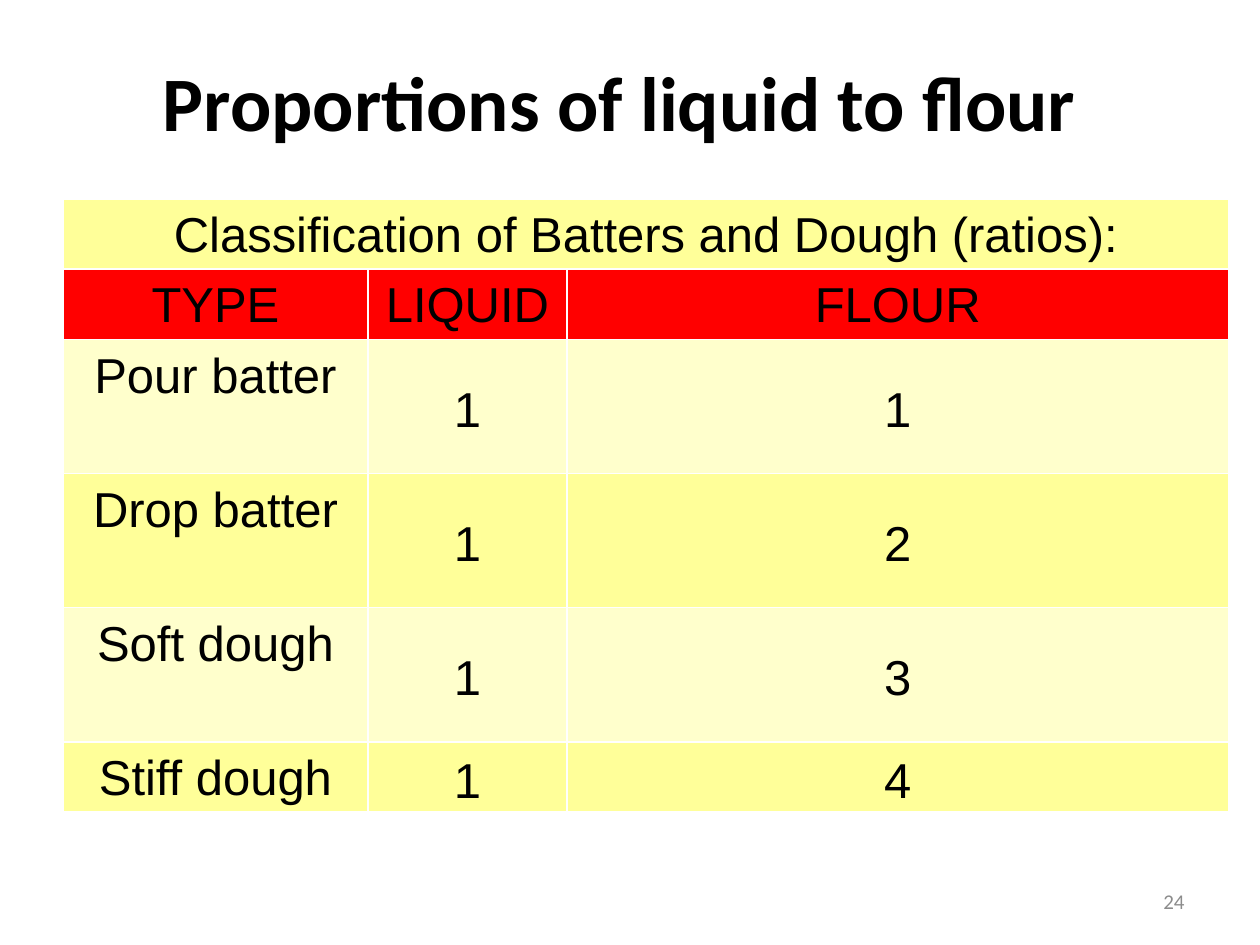
from pptx import Presentation
from pptx.dml.color import RGBColor
from pptx.enum.text import MSO_ANCHOR, PP_ALIGN
from pptx.util import Inches, Pt

COLORS = {
    "text": "000000",
    "number": "8C8C8C",
    "header": "FF0000",
    "dark_band": "FFFF99",
    "light_band": "FFFFCC",
}
TITLE = "Classification of Batters and Dough (ratios):"
HEADINGS = ("TYPE", "LIQUID", "FLOUR")
RATIOS = [
    ("Pour batter", "1", "1"),
    ("Drop batter", "1", "2"),
    ("Soft dough", "1", "3"),
    ("Stiff dough", "1", "4"),
]
COLUMN_WIDTHS = (2.42, 1.58, 5.25)
SHORT_ROW = 0.52
TALL_ROW = 1.065


def style_paragraph(paragraph, font_name, size, color, alignment, bold=False):
    paragraph.alignment = alignment
    paragraph.font.name = font_name
    paragraph.font.size = Pt(size)
    paragraph.font.bold = bold
    paragraph.font.color.rgb = RGBColor.from_string(COLORS[color])


def add_text(slide, box, text, size, color, alignment, anchor, bold=False):
    shape = slide.shapes.add_textbox(*map(Inches, box))
    frame = shape.text_frame
    frame.word_wrap = True
    frame.vertical_anchor = anchor
    frame.text = text
    style_paragraph(frame.paragraphs[0], "Calibri", size, color, alignment, bold)
    return shape


def add_title(slide, box):
    shape = add_text(slide, box, "Proportions of liquid to flour", 44, "text",
                     PP_ALIGN.CENTER, MSO_ANCHOR.TOP, bold=True)
    shape.text_frame.margin_top = Inches(0.1)


def add_slide_number(slide, box):
    add_text(slide, box, "24", 12, "number", PP_ALIGN.RIGHT, MSO_ANCHOR.MIDDLE)


def fill_cell(cell, text, color, anchor):
    cell.fill.solid()
    cell.fill.fore_color.rgb = RGBColor.from_string(COLORS[color])
    cell.margin_left = cell.margin_right = Inches(0.01)
    cell.margin_top = cell.margin_bottom = Inches(0.01)
    cell.vertical_anchor = anchor
    cell.text = text
    paragraph = cell.text_frame.paragraphs[0]
    paragraph.line_spacing = 1.15
    style_paragraph(paragraph, "Arial", 28, "text", PP_ALIGN.CENTER)


def add_ratio_table(slide, box):
    rows = [(TITLE, "", ""), HEADINGS, *RATIOS]
    bands = ["dark_band", "header"] + ["light_band", "dark_band"] * 2
    heights = [SHORT_ROW] * 2 + [TALL_ROW] * 3 + [SHORT_ROW]
    table = slide.shapes.add_table(
        len(rows), len(COLUMN_WIDTHS), *map(Inches, box)).table
    table.first_row = False
    table.horz_banding = False
    for column, width in zip(table.columns, COLUMN_WIDTHS):
        column.width = Inches(width)
    for row, height in zip(table.rows, heights):
        row.height = Inches(height)
    table.cell(0, 0).merge(table.cell(0, len(COLUMN_WIDTHS) - 1))
    for row_index, (texts, band) in enumerate(zip(rows, bands)):
        for column_index, text in enumerate(texts):
            is_value = row_index > 1 and column_index > 0
            anchor = MSO_ANCHOR.MIDDLE if is_value else MSO_ANCHOR.TOP
            fill_cell(table.cell(row_index, column_index), text, band, anchor)


def main():
    presentation = Presentation()
    presentation.slide_width = Inches(10)
    presentation.slide_height = Inches(7.5)
    slide = presentation.slides.add_slide(presentation.slide_layouts[6])
    add_title(slide, (0.67, 0.33, 8.5, 1.61))
    add_slide_number(slide, (7.17, 6.95, 2.33, 0.4))
    add_ratio_table(slide, (0.5, 1.58, 9.25, 4.76))
    presentation.save("out.pptx")


if __name__ == "__main__":
    main()
